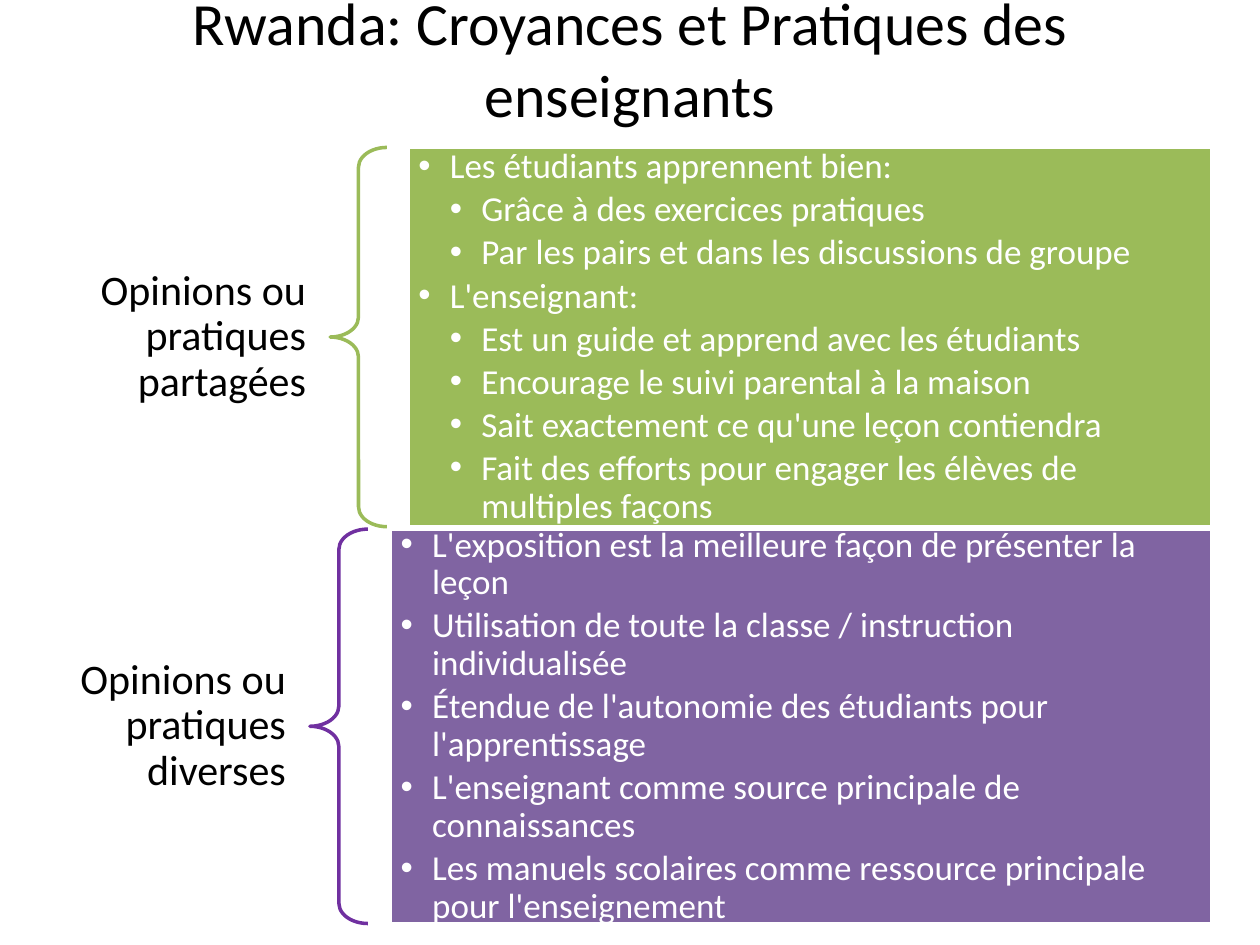
from lxml.etree import SubElement
from pptx import Presentation
from pptx.dml.color import RGBColor
from pptx.enum.shapes import MSO_SHAPE
from pptx.enum.text import MSO_ANCHOR, MSO_AUTO_SIZE, PP_ALIGN
from pptx.oxml.ns import qn
from pptx.util import Inches, Pt

# Content
TITLE = "Rwanda: Croyances et Pratiques des enseignants"
BANDS = [
    dict(
        label="Opinions ou pratiques partagées", left=0.38, width=2.24,
        top=1.17, height=3.01, brace=0.45, gap=0.17,
        fill="9BBB59", line="9BBB59",
        items=[
            (0, "Les étudiants apprennent bien:"),
            (1, "Grâce à des exercices pratiques"),
            (1, "Par les pairs et dans les discussions de groupe"),
            (0, "L'enseignant:"),
            (1, "Est un guide et apprend avec les étudiants"),
            (1, "Encourage le suivi parental à la maison"),
            (1, "Sait exactement ce qu'une leçon contiendra"),
            (1, "Fait des efforts pour engager les élèves de multiples façons"),
        ],
    ),
    dict(
        label="Opinions ou pratiques diverses", left=0.38, width=2.08,
        top=4.2, height=3.13, brace=0.46, gap=0.18,
        fill="8064A2", line="7030A0",
        items=[
            (0, "L'exposition est la meilleure façon de présenter la leçon"),
            (0, "Utilisation de toute la classe / instruction individualisée"),
            (0, "Étendue de l'autonomie des étudiants pour l'apprentissage"),
            (0, "L'enseignant comme source principale de connaissances"),
            (0, "Les manuels scolaires comme ressource principale "
                "pour l'enseignement"),
        ],
    ),
]
RIGHT = 9.62
LABEL_H = 1.14
STEP = 0.25


def color(code):
    return RGBColor.from_string(code)


def style(para, size, code, align, after=0, lead=0.9):
    para.font.name = "Calibri"
    para.font.size = Pt(size)
    para.font.color.rgb = color(code)
    para.alignment = align
    para.line_spacing = lead
    para.space_after = Pt(after)


def frame(shape, side, edge):
    text = shape.text_frame
    text.word_wrap = True
    text.auto_size = MSO_AUTO_SIZE.NONE
    text.vertical_anchor = MSO_ANCHOR.MIDDLE
    text.margin_left = text.margin_right = Inches(side)
    text.margin_top = text.margin_bottom = Inches(edge)
    return text


def bullet(para, level):
    para.level = level
    props = para._p.get_or_add_pPr()
    props.set("marL", str(Inches(STEP * (level + 1))))
    props.set("indent", str(-Inches(STEP)))
    SubElement(props, qn("a:buFont"), typeface="Arial")
    SubElement(props, qn("a:buChar"), char="•")


def outline(shape, code):
    shape.shadow.inherit = False
    shape.line.color.rgb = color(code)
    shape.line.width = Pt(2)


def add_label(slide, band):
    mid = band["top"] + band["height"] / 2
    box = slide.shapes.add_textbox(
        Inches(band["left"]), Inches(mid - LABEL_H / 2),
        Inches(band["width"]), Inches(LABEL_H))
    text = frame(box, 0.19, 0.07)
    text.text = band["label"]
    style(text.paragraphs[0], 24, "000000", PP_ALIGN.RIGHT)


def add_brace(slide, band):
    brace = slide.shapes.add_shape(
        MSO_SHAPE.LEFT_BRACE,
        Inches(band["left"] + band["width"]), Inches(band["top"]),
        Inches(band["brace"]), Inches(band["height"]))
    brace.adjustments[0] = 0.35
    brace.fill.background()
    outline(brace, band["line"])


def add_panel(slide, band):
    left = band["left"] + band["width"] + band["brace"] + band["gap"]
    panel = slide.shapes.add_shape(
        MSO_SHAPE.RECTANGLE, Inches(left), Inches(band["top"]),
        Inches(RIGHT - left), Inches(band["height"]))
    panel.fill.solid()
    panel.fill.fore_color.rgb = color(band["fill"])
    outline(panel, "FFFFFF")
    text = frame(panel, 0.08, 0.08)
    for i, (level, words) in enumerate(band["items"]):
        para = text.add_paragraph() if i else text.paragraphs[0]
        para.text = words
        style(para, 20, "FFFFFF", PP_ALIGN.LEFT, after=3)
        bullet(para, level)


def main():
    deck = Presentation()
    deck.slide_width, deck.slide_height = Inches(10), Inches(7.5)
    slide = deck.slides.add_slide(deck.slide_layouts[5])

    # Title
    title = slide.shapes.title
    title.left, title.top = Inches(0.5), Inches(0.17)
    title.width, title.height = Inches(9), Inches(0.58)
    text = frame(title, 0.1, 0.05)
    text.text = TITLE
    style(text.paragraphs[0], 34.2, "000000", PP_ALIGN.CENTER, lead=1.0)

    # Label, brace and list of each band
    for band in BANDS:
        add_label(slide, band)
        add_brace(slide, band)
        add_panel(slide, band)

    deck.save("out.pptx")


if __name__ == "__main__":
    main()
